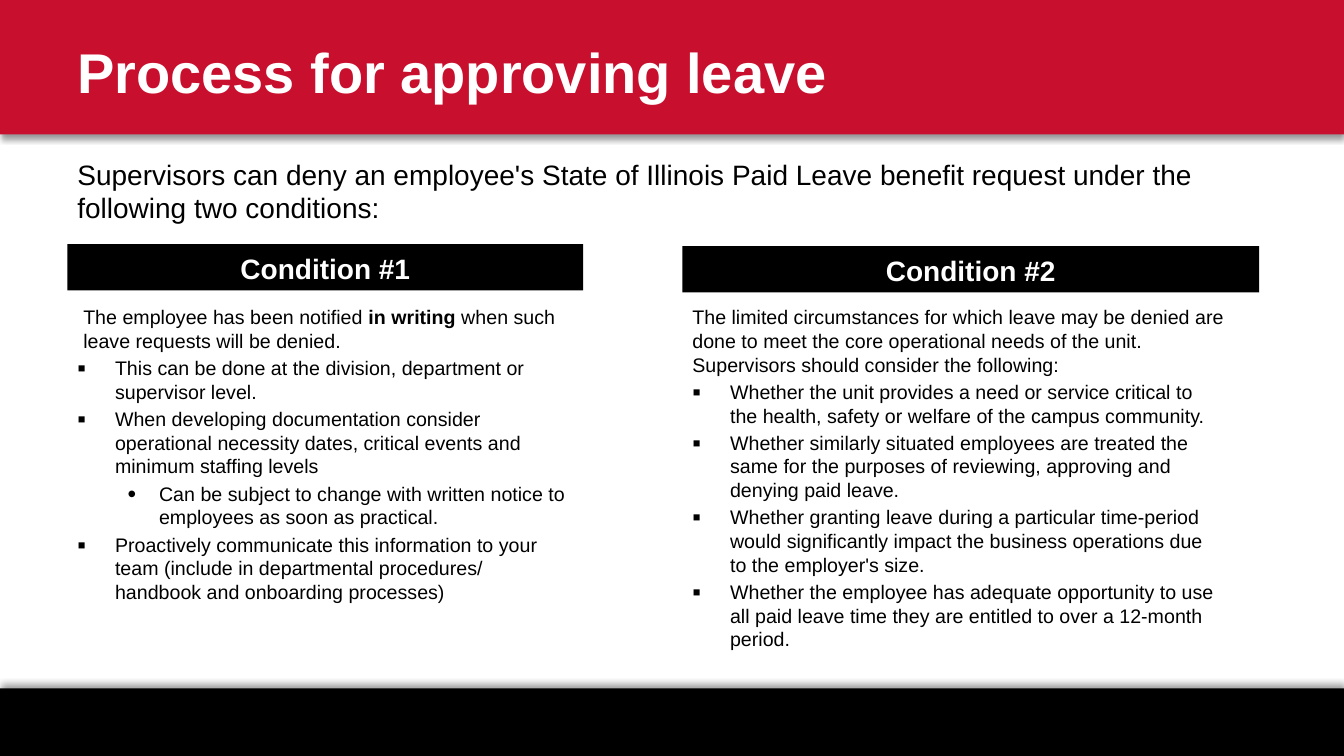
from lxml.etree import SubElement
from pptx import Presentation
from pptx.dml.color import RGBColor
from pptx.enum.shapes import MSO_SHAPE
from pptx.enum.text import MSO_ANCHOR as Anchor, PP_ALIGN as Align
from pptx.oxml.ns import qn
from pptx.util import Cm, Pt

RED, BLACK, WHITE = "C8102E", "000000", "FFFFFF"
# Paragraph styles: left margin and first-line indent in cm, bullet
PLAIN = (0, 0, None)
INSET = (0.15, 0, None)
SQUARE = (0.95, -0.95, "▪")
ROUND = (2.06, -0.79, "•")

CONDITION_1 = [
    (INSET, ["The employee has been notified ", "in writing",
             " when such leave requests will be denied."]),
    (SQUARE, ["This can be done at the division, department or supervisor level."]),
    (SQUARE, ["When developing documentation consider operational necessity dates, "
              "critical events and minimum staffing levels"]),
    (ROUND, ["Can be subject to change with written notice to employees as soon as "
             "practical."]),
    (SQUARE, ["Proactively communicate this information to your team (include in "
              "departmental procedures/ handbook and onboarding processes)"]),
]
CONDITION_2 = [
    (PLAIN, ["The limited circumstances for which leave may be denied are done to meet "
             "the core operational needs of the unit. Supervisors should consider "
             "the following:"]),
    (SQUARE, ["Whether the unit provides a need or service critical to the health, "
              "safety or welfare of the campus community."]),
    (SQUARE, ["Whether similarly situated employees are treated the same for the "
              "purposes of reviewing, approving and denying paid leave."]),
    (SQUARE, ["Whether granting leave during a particular time-period would "
              "significantly impact the business operations due to the employer's "
              "size."]),
    (SQUARE, ["Whether the employee has adequate opportunity to use all paid leave "
              "time they are entitled to over a 12-month period."]),
]


def color(value):
    return RGBColor.from_string(value)


def style_font(font, size, fill, bold=False):
    font.name, font.size, font.bold = "Arial", Pt(size), bold
    font.color.rgb = color(fill)


def add_rectangle(slide, box, fill):
    shape = slide.shapes.add_shape(MSO_SHAPE.RECTANGLE, *map(Cm, box))
    shape.shadow.inherit = False
    shape.fill.solid()
    shape.fill.fore_color.rgb = color(fill)
    shape.line.fill.background()
    return shape


def add_band(slide, box, fill, degrees):
    """Full-width bar whose soft shadow falls in the given direction."""
    band = add_rectangle(slide, box, fill)
    effects = band._element.spPr.find(qn("a:effectLst"))
    shadow = SubElement(effects, qn("a:outerShdw"), blurRad=str(Pt(4)), dist=str(Pt(3)),
                        dir=str(degrees * 60000), algn="ctr", rotWithShape="0")
    shade = SubElement(shadow, qn("a:srgbClr"), val=BLACK)
    SubElement(shade, qn("a:alpha"), val="40000")


def add_text(slide, box, text, size, fill, bold=False, anchor=Anchor.TOP):
    frame = slide.shapes.add_textbox(*map(Cm, box)).text_frame
    frame.word_wrap = True
    frame.vertical_anchor = anchor
    frame.text = text
    style_font(frame.paragraphs[0].runs[0].font, size, fill, bold)


def set_indent(paragraph, margin, indent, bullet):
    properties = paragraph._p.get_or_add_pPr()
    properties.set("marL", str(Cm(margin)))
    properties.set("indent", str(Cm(indent)))
    if bullet:
        SubElement(properties, qn("a:buSzPct"), val="125000")
        SubElement(properties, qn("a:buFont"), typeface="Arial")
        SubElement(properties, qn("a:buChar"), char=bullet)


def add_condition(slide, left, top, width, title, body_width, items):
    """Black heading bar with the explanatory list below it."""
    heading = add_rectangle(slide, (left, top, width, 1.17), BLACK)
    frame = heading.text_frame
    frame.vertical_anchor = Anchor.BOTTOM
    frame.text = title
    frame.paragraphs[0].alignment = Align.CENTER
    style_font(frame.paragraphs[0].runs[0].font, 20, WHITE, True)

    body = slide.shapes.add_textbox(*map(Cm, (left, 7.57, body_width, 9.7))).text_frame
    body.word_wrap = True
    for index, (style, texts) in enumerate(items):
        paragraph = body.add_paragraph() if index else body.paragraphs[0]
        set_indent(paragraph, *style)
        if index:
            paragraph.space_before = Pt(2.8)
        for text in texts:
            run = paragraph.add_run()
            run.text = text
            style_font(run.font, 14, BLACK, text == "in writing")


def main():
    presentation = Presentation()
    presentation.slide_width, presentation.slide_height = Cm(33.87), Cm(19.05)
    slide = presentation.slides.add_slide(presentation.slide_layouts[6])
    add_band(slide, (0, 17.35, 33.87, 1.7), BLACK, 270)
    add_band(slide, (0, 0, 33.87, 3.39), RED, 90)
    add_text(slide, (1.7, 0.43, 27.94, 2.74), "Process for approving leave",
             40, WHITE, True, Anchor.MIDDLE)
    add_condition(slide, 1.7, 6.15, 13, "Condition #1", 13, CONDITION_1)
    add_condition(slide, 17.2, 6.2, 14.53, "Condition #2", 13.92, CONDITION_2)
    add_text(slide, (1.7, 3.84, 29.11, 1.96),
             "Supervisors can deny an employee's State of Illinois Paid Leave benefit "
             "request under the following two conditions:", 20, BLACK)
    presentation.save("out.pptx")


if __name__ == "__main__":
    main()
